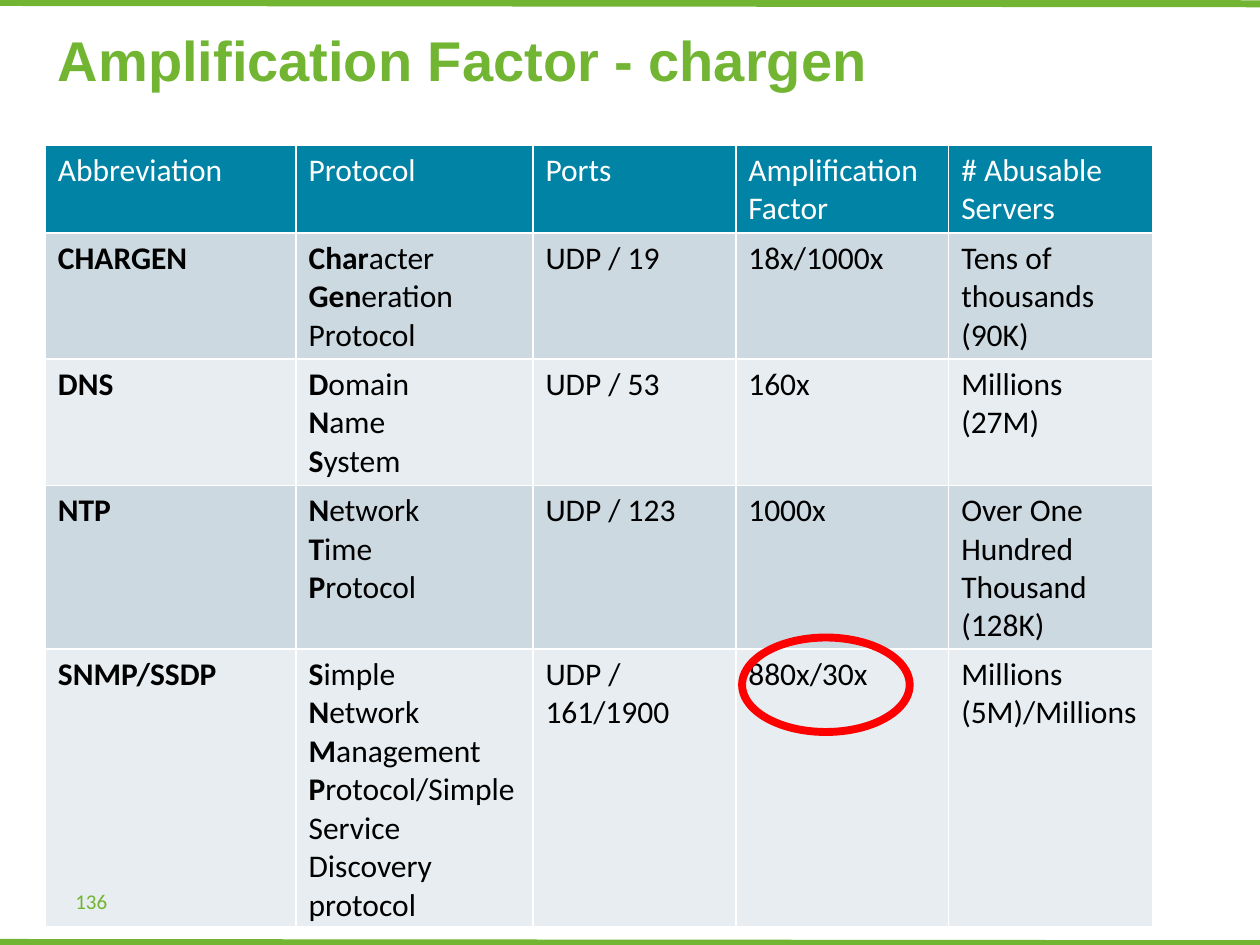
from pptx import Presentation
from pptx.dml.color import RGBColor
from pptx.enum.shapes import MSO_CONNECTOR as Conn, MSO_SHAPE as Shape
from pptx.enum.text import MSO_ANCHOR as Anchor, MSO_AUTO_SIZE as Fit, PP_ALIGN as Align
from pptx.oxml.ns import qn
from pptx.util import Pt
from lxml.etree import SubElement

PX = 9144  # EMU, at 100 px to the inch
INK = {
    "green": "71B532", "teal": "0083A5", "dark": "CCD9E1", "light": "E7EDF0",
    "white": "FFFFFF", "black": "000000", "red": "FF0000",
}
COLS = [199, 188, 161, 169, 162]
# Lines part paragraphs; text between stars is bold.
ROWS = [
    ["Abbreviation", "Protocol", "Ports", "Amplification\nFactor", "# Abusable\nServers"],
    ["*CHARGEN*", "*Char*acter\n*Gen*eration\nProtocol", "UDP / 19", "18x/1000x",
     "Tens of thousands\n(90K)"],
    ["*DNS*", "*D*omain\n*N*ame\n*S*ystem", "UDP / 53", "160x", "Millions (27M)"],
    ["*NTP*", "*N*etwork\n*T*ime\n*P*rotocol", "UDP / 123", "1000x",
     "Over One Hundred Thousand\n(128K)"],
    ["*SNMP/SSDP*",
     "*S*imple\n*N*etwork\n*M*anagement\n*P*rotocol/Simple Service Discovery protocol",
     "UDP / 161/1900", "880x/30x", "Millions\n(5M)/Millions"],
]


def box(*sides):
    return [side * PX for side in sides]


def style(font, size, name, ink, bold=False):
    font.size, font.name, font.bold = Pt(size), name, bold
    font.color.rgb = RGBColor.from_string(INK[ink])


prs = Presentation()
prs.slide_width, prs.slide_height = box(1000, 750)
slide = prs.slides.add_slide(prs.slide_layouts[5])
shapes = slide.shapes

# Green rules at the bottom and top
for y in (748, 2):
    rule = shapes.add_connector(Conn.STRAIGHT, *box(0, y, 1002, y + 1))
    rule.line.width = Pt(4)
    rule.line.color.rgb = RGBColor.from_string(INK["green"])
    SubElement(rule.element.spPr, qn("a:effectLst"))

# Title
title = shapes.title
title.left, title.top, title.width, title.height = box(36, 15, 928, 64)
frame = title.text_frame
frame.text = "Amplification Factor - chargen"
frame.vertical_anchor = Anchor.MIDDLE
frame.auto_size = Fit.SHAPE_TO_FIT_TEXT
frame.paragraphs[0].alignment = Align.LEFT
style(frame.paragraphs[0].runs[0].font, 32, "Arial", "green", True)

# Protocol table
grid = shapes.add_table(len(ROWS), len(COLS), *box(36, 115, 879, 620))
table = grid.table
for col, width in zip(table.columns, COLS):
    col.width = width * PX
for r, row in enumerate(ROWS):
    table.rows[r].height = (41 if r else 67) * PX
    fill = "teal" if r == 0 else "dark" if r % 2 else "light"
    for c, text in enumerate(row):
        cell = table.cell(r, c)
        cell.fill.solid()
        cell.fill.fore_color.rgb = RGBColor.from_string(INK[fill])
        for i, line in enumerate(text.split("\n")):
            para = cell.text_frame.add_paragraph() if i else cell.text_frame.paragraphs[0]
            for j, part in enumerate(line.split("*")):
                if part:
                    run = para.add_run()
                    run.text = part
                    style(run.font, 18, "Calibri", "black" if r else "white", j % 2 == 1)
grid.height = 620 * PX

# Page number
page = shapes.add_textbox(*box(50, 695, 233, 40)).text_frame
page.word_wrap = True
page.vertical_anchor = Anchor.MIDDLE
page.text = "136"
style(page.paragraphs[0].runs[0].font, 12, "Calibri", "green")

# Ring around the SNMP/SSDP factor
ring = shapes.add_shape(Shape.OVAL, *box(589, 506, 133, 75))
ring.shadow.inherit = False
ring.fill.background()
ring.line.width = Pt(4.5)
ring.line.color.rgb = RGBColor.from_string(INK["red"])

prs.save("out.pptx")
